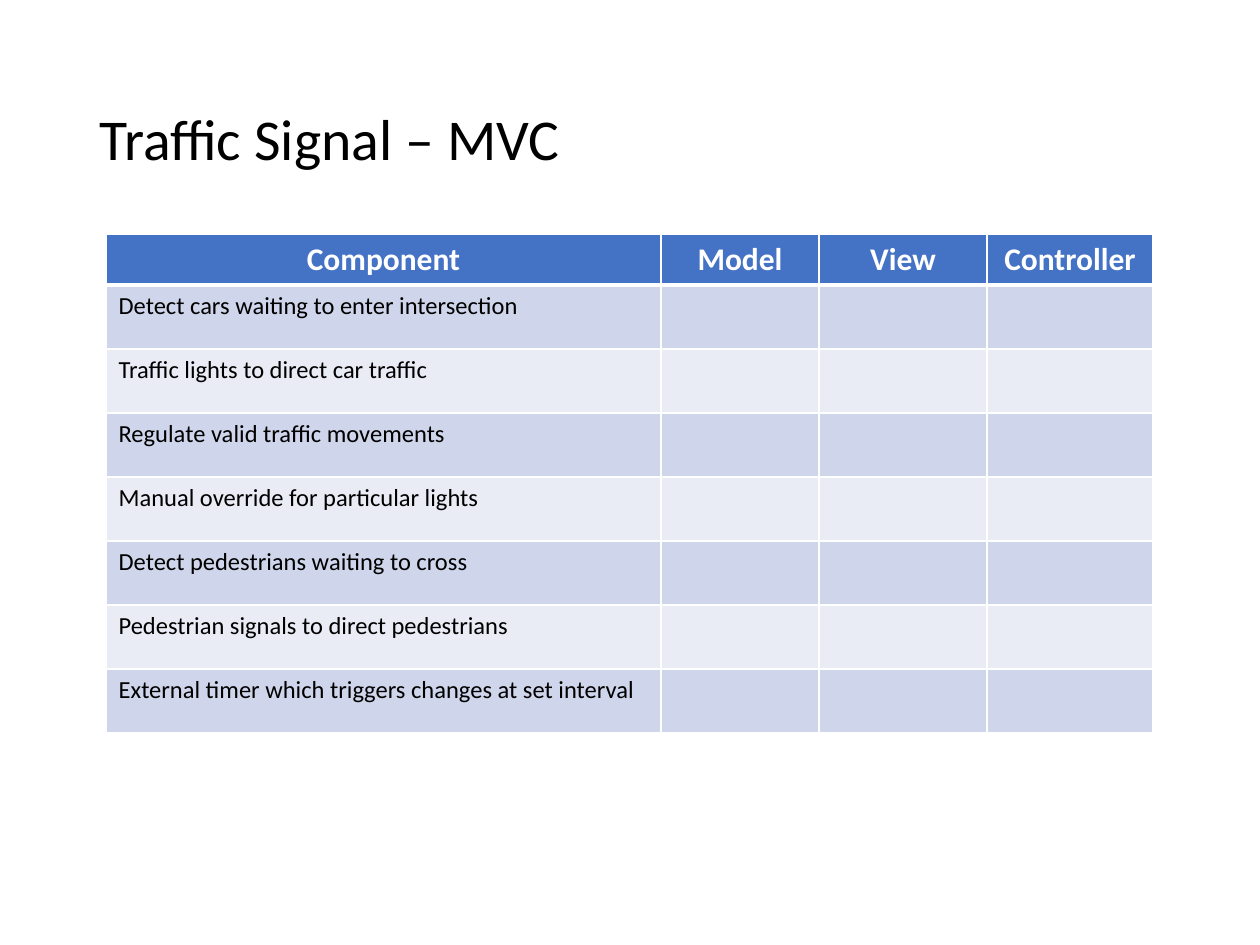
from lxml import etree
from pptx import Presentation
from pptx import util as u
from pptx.dml.color import RGBColor
from pptx.enum import text
from pptx.oxml import ns

BLACK = RGBColor(0x00, 0x00, 0x00)
WHITE = RGBColor(0xFF, 0xFF, 0xFF)
HEADER_BLUE = RGBColor(0x44, 0x72, 0xC4)
BANDS = (RGBColor(0xCF, 0xD5, 0xEA), RGBColor(0xE9, 0xEB, 0xF5))

HEADINGS = ("Component", "Model", "View", "Controller")
COMPONENTS = (
    "Detect cars waiting to enter intersection",
    "Traffic lights to direct car traffic",
    "Regulate valid traffic movements",
    "Manual override for particular lights",
    "Detect pedestrians waiting to cross",
    "Pedestrian signals to direct pedestrians",
    "External timer which triggers changes at set interval",
)
COLUMN_WIDTHS = (555, 158, 168, 166)
HEADER_HEIGHT, ROW_HEIGHT = 51, 64


def px(length):
    return u.Emu(round(length * u.Inches(1) / 126))


class SlideBuilder:
    """Hold the slide and its style, and add each kind of element."""

    font = "Calibri"

    def __init__(self, deck):
        self.slide = deck.slides.add_slide(deck.slide_layouts[5])

    def format_text(self, paragraph, size, color, bold=False, align=text.PP_ALIGN.LEFT):
        paragraph.alignment = align
        paragraph.font.color.rgb = color
        for name, value in {"name": self.font, "size": u.Pt(size), "bold": bold}.items():
            setattr(paragraph.font, name, value)

    def add_title(self, wording, left, top, width, height):
        title = self.slide.shapes.title
        place = {"left": left, "top": top, "width": width, "height": height}
        for name, value in place.items():
            setattr(title, name, px(value))
        frame = title.text_frame
        frame.text = wording
        layout = {
            "vertical_anchor": text.MSO_ANCHOR.MIDDLE,
            "auto_size": text.MSO_AUTO_SIZE.NONE,
            "word_wrap": True,
        }
        for name, value in layout.items():
            setattr(frame, name, value)
        heading = frame.paragraphs[0]
        heading.line_spacing = 0.9
        self.format_text(heading, 33, BLACK)

    def add_borders(self, cell, top, bottom):
        properties = cell._tc.get_or_add_tcPr()
        for side, points in {"lnL": 1, "lnR": 1, "lnT": top, "lnB": bottom}.items():
            line = etree.SubElement(properties, ns.qn(f"a:{side}"), w=str(u.Pt(points)))
            fill = etree.SubElement(line, ns.qn("a:solidFill"))
            etree.SubElement(fill, ns.qn("a:srgbClr"), val=str(WHITE))

    def add_table(self, rows, left, top, widths, heights):
        table = self.slide.shapes.add_table(
            len(rows), len(widths), px(left), px(top), px(sum(widths)), px(sum(heights))
        ).table
        for column, width in zip(table.columns, widths):
            column.width = px(width)
        for index, (row, height, wordings) in enumerate(zip(table.rows, heights, rows)):
            row.height = px(height)
            is_header = index == 0
            for cell, wording in zip(row.cells, wordings):
                self.add_borders(cell, 3 if index == 1 else 1, 3 if is_header else 1)
                cell.fill.solid()
                cell.fill.fore_color.rgb = HEADER_BLUE if is_header else BANDS[(index - 1) % 2]
                cell.text = wording
                paragraph = cell.text_frame.paragraphs[0]
                if is_header:
                    self.format_text(paragraph, 18, WHITE, True, text.PP_ALIGN.CENTER)
                else:
                    self.format_text(paragraph, 14, BLACK)


def main():
    deck = Presentation()
    deck.slide_width, deck.slide_height = px(1260), px(945)
    builder = SlideBuilder(deck)
    builder.add_title("Traffic Signal – MVC", 87, 50, 1086, 183)
    rows = [HEADINGS] + [(component, "", "", "") for component in COMPONENTS]
    heights = [HEADER_HEIGHT] + [ROW_HEIGHT] * len(COMPONENTS)
    builder.add_table(rows, 106, 234, COLUMN_WIDTHS, heights)
    deck.save("out.pptx")


if __name__ == "__main__":
    main()
